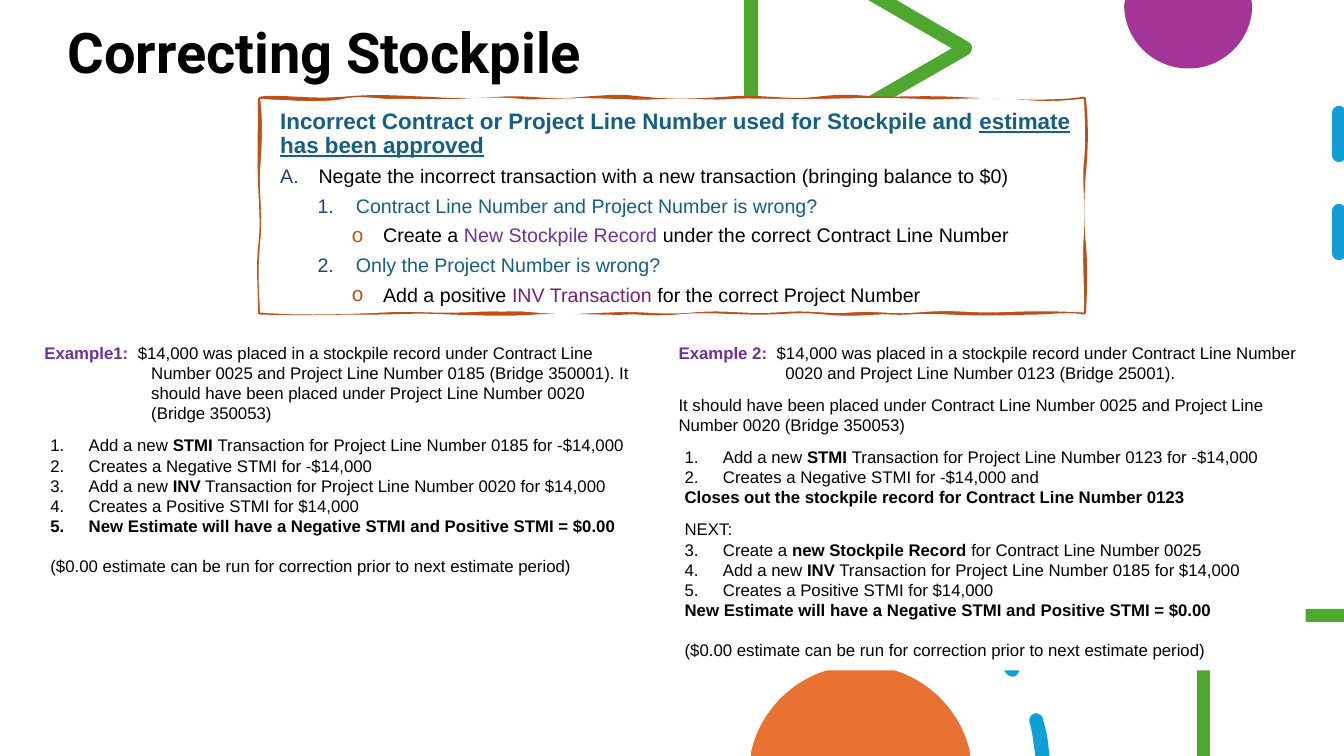
import pptx
import pptx.util
import pptx.dml.color
import pptx.enum.dml
import pptx.enum.shapes
import pptx.enum.text
import pptx.oxml.ns
import lxml.etree

WIDE, HIGH = 13.33, 7.5
GREEN, BLUE, ORANGE, PURPLE = "4EA72E", "0F9ED5", "E97132", "A02B93"
RUST, NAVY, TEAL, WHITE = "C04F15", "1F4283", "156082", "FFFFFF"

# Look of a run: colour, bold, underline
LOOKS = {
    "plain": ("000000", False, False),
    "bold": ("000000", True, False),
    "label": ("7030A0", True, False),
    "head": (TEAL, True, False),
    "under": (TEAL, True, True),
    "ask": (TEAL, False, False),
    "record": ("7030A0", False, False),
    "inv": ("78206E", False, False),
}
# Form of a paragraph: left margin, indent, number type or sign, bullet colour
FORMS = {
    "head": (0, 0, None, None),
    "letter": (0.38, -0.38, "alphaUcPeriod", NAVY),
    "number": (0.75, -0.38, "arabicPeriod", NAVY),
    "sub": (1.02, -0.31, "o", RUST),
    "hang": (1.12, -1.06, None, None),
    "near": (0.06, 0, None, None),
    "note": (0.12, 0, None, None),
    "step": (0.5, -0.38, "arabicPeriod", None),
}
TITLE = "Correcting Stockpile"

# Paragraphs: form, first number, space before in points, runs
RULES = [
    ("head", 1, 6, [("Incorrect Contract or Project Line Number used for Stockpile and ", "head"),
                    ("estimate has been approved", "under")]),
    ("letter", 1, 6, [("Negate the incorrect transaction with a new transaction (bringing balance to $0)", "plain")]),
    ("number", 1, 6, [("Contract Line Number and Project Number is wrong?", "ask")]),
    ("sub", 1, 6, [("Create a ", "plain"), ("New Stockpile Record ", "record"),
                   ("under the correct Contract Line Number", "plain")]),
    ("number", 2, 6, [("Only the Project Number is wrong?", "ask")]),
    ("sub", 1, 6, [("Add a positive ", "plain"), ("INV Transaction ", "inv"),
                   ("for the correct Project Number", "plain")]),
]
TOTAL = "New Estimate will have a Negative STMI and Positive STMI = $0.00"
CLOSE = ("note", 1, 14.4, [("($0.00 estimate can be run for correction prior to next estimate period)", "plain")])
GAP = 8.4
FIRST = [
    ("hang", 1, 0, [("Example1:", "label"),
                    ("  $14,000 was placed in a stockpile record under Contract Line Number 0025 and Project Line "
                     "Number 0185 (Bridge 350001). It should have been placed under Project Line Number 0020 "
                     "(Bridge 350053)", "plain")]),
    ("step", 1, GAP, [("Add a new ", "plain"), ("STMI ", "bold"),
                      ("Transaction for Project Line Number 0185 for -$14,000", "plain")]),
    ("step", 1, 0, [("Creates a Negative STMI for -$14,000", "plain")]),
    ("step", 1, 0, [("Add a new ", "plain"), ("INV", "bold"),
                    (" Transaction for Project Line Number 0020 for $14,000", "plain")]),
    ("step", 1, 0, [("Creates a Positive STMI for $14,000", "plain")]),
    ("step", 1, 0, [(TOTAL, "bold")]),
    CLOSE,
]
SECOND = [
    ("hang", 1, 0, [("Example 2:", "label"),
                    ("  $14,000 was placed in a stockpile record under Contract Line Number 0020 and Project Line "
                     "Number 0123 (Bridge 25001).", "plain")]),
    ("near", 1, GAP, [("It should have been placed under Contract Line Number 0025 and Project Line Number 0020 "
                       "(Bridge 350053)", "plain")]),
    ("step", 1, GAP, [("Add a new ", "plain"), ("STMI ", "bold"),
                      ("Transaction for Project Line Number 0123 for -$14,000", "plain")]),
    ("step", 1, 0, [("Creates a Negative STMI for -$14,000 and", "plain")]),
    ("note", 1, 0, [("Closes out the stockpile record for Contract Line Number 0123", "bold")]),
    ("note", 1, GAP, [("NEXT:", "plain")]),
    ("step", 3, 0, [("Create a ", "plain"), ("new Stockpile Record ", "bold"),
                    ("for Contract Line Number 0025", "plain")]),
    ("step", 3, 0, [("Add a new ", "plain"), ("INV", "bold"),
                    (" Transaction for Project Line Number 0185 for $14,000", "plain")]),
    ("step", 3, 0, [("Creates a Positive STMI for $14,000", "plain")]),
    ("note", 1, 0, [(TOTAL, "bold")]),
    CLOSE,
]
BOXES = [((0.38, 3.28, 5.9, 2.46), FIRST), ((6.67, 3.28, 6.28, 3.37), SECOND)]

# Outlines: a pair is a corner, six numbers are a Bezier curve
DISC = [(11.16, 0), (12.41, 0), (12.42, 0.05), (12.42, 0.4, 12.13, 0.68, 11.79, 0.68),
        (11.44, 0.68, 11.15, 0.4, 11.15, 0.05)]
ARROW = [(7.38, 0), (7.52, 0), (7.52, 1.59), (9.44, 0.48), (8.61, 0), (8.89, 0), (9.61, 0.42),
         (9.64, 0.44, 9.65, 0.48, 9.63, 0.51), (9.63, 0.52, 9.62, 0.53, 9.61, 0.54), (7.48, 1.76),
         (7.47, 1.77, 7.46, 1.77, 7.45, 1.77), (7.41, 1.77, 7.38, 1.74, 7.38, 1.71)]
RING = [
    [(10.29, 7.08), (10.31, 7.08, 10.34, 7.1, 10.34, 7.12), (10.36, 7.19, 10.38, 7.26, 10.39, 7.33),
     (10.41, 7.5), (10.27, 7.5), (10.25, 7.36), (10.24, 7.29, 10.23, 7.22, 10.21, 7.16),
     (10.2, 7.12, 10.23, 7.09, 10.26, 7.08), (10.27, 7.07, 10.28, 7.07, 10.29, 7.08)],
    [(9.76, 6.26), (9.78, 6.26, 9.8, 6.27, 9.81, 6.28), (9.92, 6.37, 10.02, 6.48, 10.1, 6.6),
     (10.12, 6.63, 10.11, 6.68, 10.08, 6.7), (10.08, 6.7, 10.07, 6.71, 10.06, 6.71),
     (10.04, 6.72, 10, 6.71, 9.98, 6.68), (9.91, 6.57, 9.82, 6.47, 9.72, 6.39),
     (9.69, 6.36, 9.69, 6.32, 9.71, 6.29), (9.73, 6.27, 9.74, 6.27, 9.76, 6.26)],
    [(8.35, 5.89), (8.38, 5.89, 8.4, 5.91, 8.41, 5.94), (8.41, 5.98, 8.39, 6.01, 8.36, 6.02),
     (8.22, 6.05, 8.09, 6.09, 7.97, 6.15), (7.94, 6.17, 7.9, 6.16, 7.88, 6.12),
     (7.86, 6.09, 7.88, 6.05, 7.91, 6.03), (8.04, 5.96, 8.18, 5.92, 8.32, 5.89)],
    [(8.9, 5.87), (9.04, 5.89, 9.18, 5.93, 9.32, 5.98), (9.35, 5.99, 9.37, 6.03, 9.36, 6.07),
     (9.35, 6.09, 9.33, 6.1, 9.32, 6.11), (9.3, 6.12, 9.28, 6.12, 9.27, 6.11),
     (9.14, 6.06, 9.01, 6.03, 8.88, 6.01), (8.84, 6, 8.82, 5.97, 8.82, 5.93), (8.83, 5.89, 8.86, 5.86, 8.9, 5.87)],
]
DOME = [(8.54, 6.6), (9.07, 6.6, 9.51, 6.97, 9.62, 7.46), (9.62, 7.5), (7.45, 7.5), (7.45, 7.46),
        (7.56, 6.97, 8, 6.6, 8.54, 6.6)]
ANGLE = [(11.94, 6.04), (13.33, 6.04), (13.33, 6.17), (12, 6.17), (12, 7.5), (11.87, 7.5), (11.87, 6.1),
         (11.87, 6.07, 11.9, 6.04, 11.94, 6.04)]
DECOR = [(PURPLE, [DISC]), (GREEN, [ARROW]), (BLUE, RING), (ORANGE, [DOME]), (GREEN, [ANGLE])]
EDGE = [
    (2.58, 0.98), (2.77, 0.95, 3.06, 1.01, 3.41, 0.98), (3.75, 0.95, 3.92, 0.97, 4.23, 0.98),
    (4.54, 1, 4.66, 1, 4.97, 0.98), (5.29, 0.96, 5.39, 1.02, 5.8, 0.98), (6.2, 0.95, 6.17, 0.96, 6.38, 0.98),
    (6.58, 1, 6.79, 1.01, 7.2, 0.98), (7.61, 0.95, 7.79, 1.02, 8.11, 0.98), (8.42, 0.94, 8.61, 0.98, 8.77, 0.98),
    (8.93, 0.98, 9.17, 0.97, 9.43, 0.98), (9.68, 0.99, 10.41, 1.04, 10.75, 0.98),
    (10.78, 1.26, 10.77, 1.51, 10.75, 1.71), (10.73, 1.91, 10.73, 2.24, 10.75, 2.43),
    (10.77, 2.63, 10.76, 2.95, 10.75, 3.1), (10.62, 3.07, 10.39, 3.1, 10.25, 3.1),
    (10.12, 3.1, 9.84, 3.12, 9.43, 3.1), (9.02, 3.08, 9.04, 3.11, 8.85, 3.1), (8.65, 3.09, 8.51, 3.13, 8.19, 3.1),
    (7.87, 3.07, 7.85, 3.1, 7.53, 3.1), (7.2, 3.1, 6.99, 3.07, 6.7, 3.1), (6.42, 3.12, 6.33, 3.09, 6.21, 3.1),
    (6.08, 3.11, 5.57, 3.08, 5.3, 3.1), (5.03, 3.12, 4.85, 3.11, 4.48, 3.1), (4.1, 3.08, 3.99, 3.1, 3.65, 3.1),
    (3.32, 3.1, 3.09, 3.11, 2.58, 3.1), (2.58, 2.82, 2.56, 2.7, 2.58, 2.46), (2.61, 2.21, 2.59, 2.09, 2.58, 1.79),
    (2.57, 1.5, 2.58, 1.37, 2.58, 0.98),
]
PANEL = [
    (2.58, 0.98), (2.88, 1, 3.23, 1.02, 3.41, 0.98), (3.58, 0.94, 3.78, 0.99, 3.91, 0.98),
    (4.03, 0.98, 4.41, 0.99, 4.57, 0.98), (4.73, 0.97, 4.97, 0.96, 5.15, 0.98), (5.32, 1, 5.61, 0.96, 6.05, 0.98),
    (6.49, 1, 6.43, 0.98, 6.79, 0.98), (7.16, 0.99, 7.12, 0.99, 7.29, 0.98), (7.46, 0.97, 7.75, 0.99, 8.2, 0.98),
    (8.64, 0.97, 8.83, 0.97, 9.1, 0.98), (9.37, 1, 9.63, 0.96, 10.01, 0.98), (10.38, 1.01, 10.43, 1.01, 10.75, 0.98),
    (10.76, 1.11, 10.77, 1.45, 10.75, 1.62), (10.73, 1.79, 10.77, 2.05, 10.75, 2.33),
    (10.73, 2.6, 10.76, 2.84, 10.75, 3.1), (10.36, 3.08, 10.15, 3.09, 9.84, 3.1), (9.54, 3.1, 9.44, 3.07, 9.1, 3.1),
    (8.76, 3.12, 8.72, 3.08, 8.44, 3.1), (8.16, 3.12, 8.06, 3.07, 7.7, 3.1), (7.34, 3.12, 7.23, 3.07, 6.87, 3.1),
    (6.52, 3.13, 6.38, 3.08, 6.05, 3.1), (5.72, 3.11, 5.67, 3.13, 5.31, 3.1), (4.95, 3.07, 4.9, 3.09, 4.57, 3.1),
    (4.23, 3.11, 4.08, 3.08, 3.82, 3.1), (3.57, 3.11, 3.03, 3.14, 2.58, 3.1),
    (2.56, 2.77, 2.56, 2.66, 2.58, 2.41), (2.61, 2.17, 2.57, 1.96, 2.58, 1.69), (2.6, 1.41, 2.61, 1.19, 2.58, 0.98),
]

inch, pt = pptx.util.Inches, pptx.util.Pt


def rgb(code):
    return pptx.dml.color.RGBColor.from_string(code)


def sub(node, tag, **attrs):
    return lxml.etree.SubElement(node, pptx.oxml.ns.qn("a:" + tag), attrs)


def outline(slide, loops, fill):
    """Draw closed loops as one freeform, then bend its curved steps."""
    pen = None
    for loop in loops:
        ends = [(inch(step[-2]), inch(step[-1])) for step in loop]
        if pen:
            pen.move_to(*ends[0])
        else:
            pen = slide.shapes.build_freeform(*ends[0])
        pen.add_line_segments(ends[1:], close=True)
    shape = pen.convert_to_shape()
    track = shape._element.spPr.find(".//" + pptx.oxml.ns.qn("a:path"))
    moves = [node for node in track if len(node)]
    for node, step in zip(moves, [step for loop in loops for step in loop]):
        if len(step) == 6:
            curve = sub(track, "cubicBezTo")
            for x, y in zip(step[::2], step[1::2]):
                sub(curve, "pt", x=str(inch(x) - shape.left), y=str(inch(y) - shape.top))
            track.replace(node, curve)
    shape.shadow.inherit = False
    shape.fill.solid()
    shape.fill.fore_color.rgb = rgb(fill)
    shape.line.fill.background()
    return shape, track


def write(frame, paras, size, space, inset, anchor, head=None, font="Arial"):
    frame.word_wrap = True
    frame.auto_size = pptx.enum.text.MSO_AUTO_SIZE.NONE
    frame.vertical_anchor = anchor
    frame.margin_left, frame.margin_top, frame.margin_right, frame.margin_bottom = map(inch, inset)
    for i, (form, first, before, runs) in enumerate(paras):
        para = frame.add_paragraph() if i else frame.paragraphs[0]
        para.alignment = pptx.enum.text.PP_ALIGN.LEFT
        para.line_spacing, para.space_before, para.space_after = space, pt(before), pt(0)
        left, indent, kind, tint = FORMS[form]
        para.level = int(form == "sub")
        props = para._p.get_or_add_pPr()
        props.set("marL", str(inch(left)))
        props.set("indent", str(inch(indent)))
        if tint:
            sub(sub(props, "buClr"), "srgbClr", val=tint)
        if kind == "o":
            sub(props, "buSzPct", val="105000")
        if kind:
            sub(props, "buFont", typeface=font)
        if kind == "o":
            sub(props, "buChar", char=kind)
        elif kind:
            sub(props, "buAutoNum", type=kind, startAt=str(first))
        else:
            sub(props, "buNone")
        for text, look in runs:
            run = para.add_run()
            run.text = text
            tone, run.font.bold, run.font.underline = LOOKS[look]
            run.font.color.rgb = rgb(tone)
            run.font.name = font
            run.font.size = pt(head if head and form == "head" else size)


def place(shape, box):
    shape.left, shape.top, shape.width, shape.height = map(inch, box)


def main():
    deck = pptx.Presentation()
    deck.slide_width, deck.slide_height = inch(WIDE), inch(HIGH)
    slide = deck.slides.add_slide(deck.slide_layouts[3])
    title, *bodies = slide.placeholders
    middle, top = pptx.enum.text.MSO_ANCHOR.MIDDLE, pptx.enum.text.MSO_ANCHOR.TOP

    for tint, loops in DECOR:
        shape, track = outline(slide, loops, tint)
        if tint == PURPLE:
            sub(shape._element.spPr.find(".//" + pptx.oxml.ns.qn("a:srgbClr")), "alpha", val="95000")
    dash = slide.shapes.add_connector(pptx.enum.shapes.MSO_CONNECTOR.STRAIGHT,
                                      inch(13.28), inch(1.12), inch(13.28), inch(2.87))
    dash.line.color.rgb = rgb(BLUE)
    dash.line.width = pt(10)
    dash.line.dash_style = pptx.enum.dml.MSO_LINE.DASH
    dash.line._ln.set("cap", "rnd")
    sub(dash._element.spPr, "effectLst")

    # The first loop is only stroked, the second only filled
    panel, track = outline(slide, [EDGE, PANEL], WHITE)
    panel.line.color.rgb = rgb(RUST)
    panel.line.width = pt(3)
    inner = sub(track.getparent(), "path", w=track.get("w"), h=track.get("h"), stroke="0")
    inner.extend(list(track)[len(EDGE) + 1:])
    track.set("fill", "none")
    write(panel.text_frame, RULES, 14, 0.9, (0.2, 0.1, 0.1, 0.05), middle, head=16)

    for body, (box, paras) in zip(bodies, BOXES):
        place(body, box)
        body.fill.solid()
        body.fill.fore_color.rgb = rgb(WHITE)
        write(body.text_frame, paras, 12, 1.0, (0, 0.12, 0, 0), top)
    place(title, (0.57, 0.3, 5.9, 0.49))
    write(title.text_frame, [("head", 1, 0, [(TITLE, "bold")])], 40, 0.9,
          (0.1, 0.05, 0.1, 0.05), middle, font="Roboto")
    for holder in (*bodies, title):
        slide.shapes._spTree.append(holder._element)
    deck.save("out.pptx")


if __name__ == "__main__":
    main()
